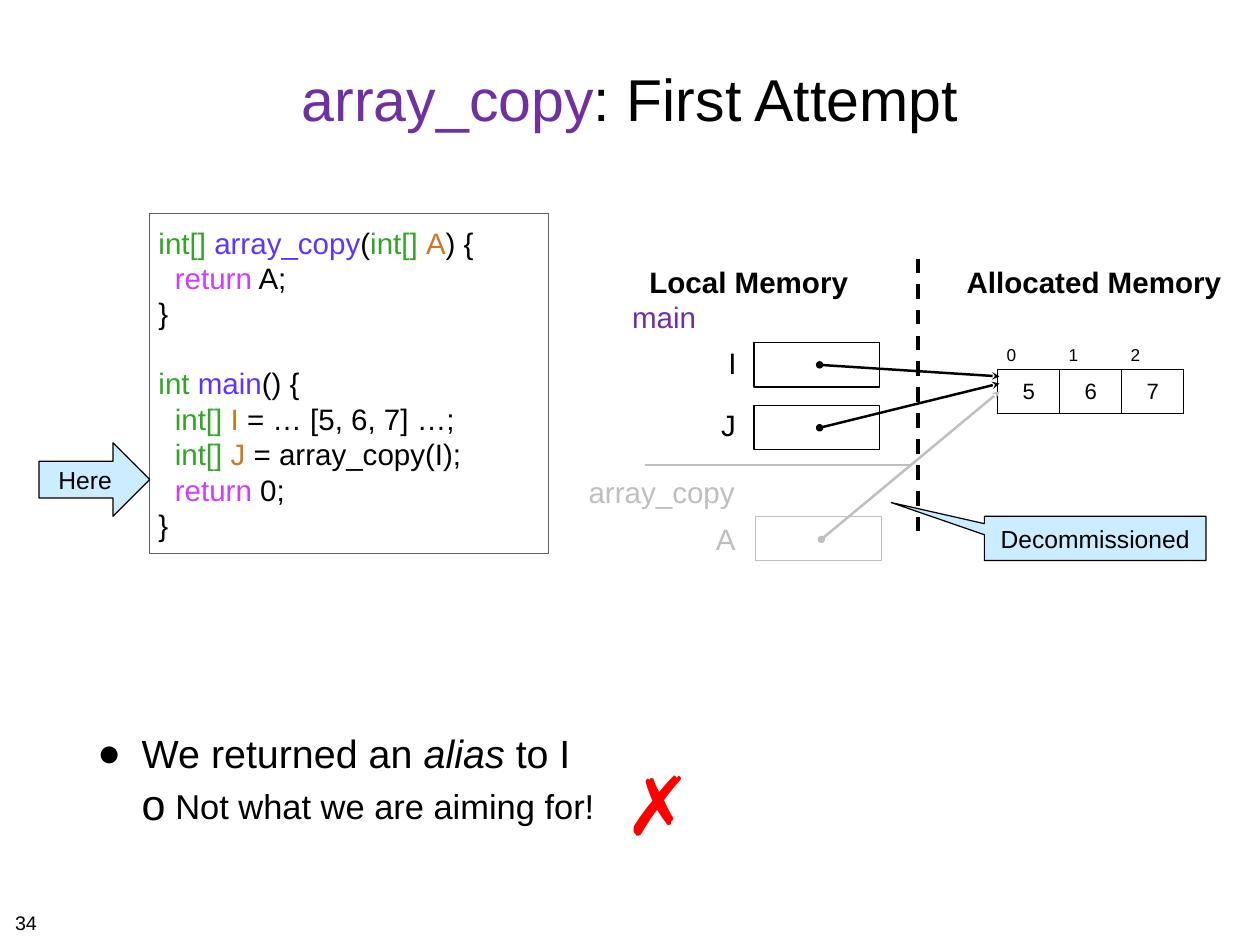
import pptx
import pptx.util
import pptx.dml.color
import pptx.enum.dml
import pptx.enum.shapes
import pptx.enum.text
import pptx.oxml
import pptx.oxml.ns

Inches, Pt = pptx.util.Inches, pptx.util.Pt
RGBColor = pptx.dml.color.RGBColor
Shapes = pptx.enum.shapes.MSO_SHAPE
Align = pptx.enum.text.PP_ALIGN
Anchor = pptx.enum.text.MSO_ANCHOR

BLACK = RGBColor(0, 0, 0)
GRAY = RGBColor(0xBF, 0xBF, 0xBF)
FRAME = RGBColor(0x5E, 0x5E, 0x5E)
PURPLE = RGBColor(0x70, 0x30, 0xA0)
TYPE = RGBColor(0x34, 0xA3, 0x27)
FUNCTION = RGBColor(0x5E, 0x34, 0xFF)
VARIABLE = RGBColor(0xCD, 0x79, 0x23)
KEYWORD = RGBColor(0xD0, 0x3B, 0xFF)
PALE_BLUE = RGBColor(0xCC, 0xEC, 0xFF)
RED = RGBColor(0xFF, 0, 0)

TITLE = [("array_copy", PURPLE), (": First Attempt", BLACK)]
CODE = [
    [("int[] ", TYPE), ("array_copy", FUNCTION), ("(", BLACK), ("int[] ", TYPE),
     ("A", VARIABLE), (") {", BLACK)],
    [("  return", KEYWORD), (" A;", BLACK)],
    [("}", BLACK)],
    [("int ", TYPE), ("main", FUNCTION), ("() {", BLACK)],
    [("  int[] ", TYPE), ("I", VARIABLE), (" = … [5, 6, 7] …;", BLACK)],
    [("  int[] ", TYPE), ("J", VARIABLE), (" = array_copy(I);", BLACK)],
    [("  return", KEYWORD), (" 0;", BLACK)],
    [("}", BLACK)],
]
MAIN_LINE = 3
# spans, size, left margin, hanging indent, space before, bullet, bullet percent
BULLETS = [
    ([("We returned an ", BLACK), ("alias", BLACK), (" to I", BLACK)], 32, 0.5, 0.5, 8, "●", 100),
    ([("Not what we are aiming for!", BLACK)], 28, 0.88, 0.38, 7, "o", 125),
]
# text, left, top, width, height, size, colour, bold, alignment, side and top inset
LABELS = [
    ("Allocated Memory", 10.84, 2.92, 3.01, 0.52, 24, BLACK, True, Align.CENTER, 0.06, 0.06),
    ("Local Memory", 7.26, 2.92, 2.38, 0.52, 24, BLACK, True, Align.CENTER, 0.06, 0.06),
    ("I", 8.16, 3.83, 0.2, 0.52, 24, BLACK, False, Align.CENTER, 0.06, 0.06),
    ("J", 8.08, 4.54, 0.28, 0.52, 24, BLACK, False, Align.CENTER, 0.06, 0.06),
    ("A", 8.02, 5.82, 0.34, 0.52, 24, GRAY, False, Align.RIGHT, 0.06, 0.06),
    ("main", 7.03, 3.33, 0.93, 0.51, 24, PURPLE, False, Align.CENTER, 0.1, 0.05),
    ("array_copy", 6.52, 5.3, 1.87, 0.51, 24, GRAY, False, Align.RIGHT, 0.1, 0.05),
    ("✗", 6.95, 8.47, 0.8, 1.21, 66, RED, True, Align.CENTER, 0.1, 0.05),
    ("34", 0.11, 10.23, 0.37, 0.35, 16, BLACK, False, Align.LEFT, 0.06, 0.06),
]
VARIABLE_BOXES = [(8.51, 3.87, BLACK), (8.51, 4.58, BLACK), (8.53, 5.83, GRAY)]
POINTERS = [
    ((9.27, 6.09), (11.28, 4.42), GRAY),
    ((9.25, 4.12), (11.28, 4.25), BLACK),
    ((9.25, 4.83), (11.28, 4.33), BLACK),
]
ARRAY = [["0", "1", "2"], ["5", "6", "7"]]
ARRAY_STYLE = [(14, Align.LEFT, Anchor.BOTTOM, ["lnB"]),
               (18, Align.CENTER, Anchor.MIDDLE, ["lnL", "lnR", "lnT", "lnB"])]
CELL_WIDTH, CELL_HEIGHT = 0.7, 0.5

deck = pptx.Presentation()
deck.slide_width, deck.slide_height = Inches(14.22), Inches(10.67)
page = deck.slides.add_slide(deck.slide_layouts[5])


def write(para, spans, size, align=Align.LEFT, bold=False):
    para.alignment = align
    for text, color in spans:
        run = para.add_run()
        run.text = text
        run.font.name, run.font.size, run.font.bold = "Arial", Pt(size), bold
        run.font.color.rgb = color


def set_frame(frame, side, top, anchor=Anchor.MIDDLE, wrap=True):
    frame.margin_left = frame.margin_right = Inches(side)
    frame.margin_top = frame.margin_bottom = Inches(top)
    frame.vertical_anchor, frame.word_wrap = anchor, wrap


def add_box(kind, left, top, width, height, line, fill=None):
    box = page.shapes.add_shape(kind, *map(Inches, (left, top, width, height)))
    box.shadow.inherit = False
    box.line.color.rgb, box.line.width = line, Pt(1)
    if fill is None:
        box.fill.background()
    else:
        box.fill.solid()
        box.fill.fore_color.rgb = fill
    return box


def add_line(start, end, color, width):
    line = page.shapes.add_connector(pptx.enum.shapes.MSO_CONNECTOR.STRAIGHT,
                                     *map(Inches, start + end))
    line.line.color.rgb, line.line.width = color, Pt(width)
    line._element.spPr.append(pptx.oxml.parse_xml(
        f"<a:effectLst {pptx.oxml.ns.nsdecls('a')}/>"))
    return line


def add_child(parent, tag, **attributes):
    child = parent.makeelement(pptx.oxml.ns.qn(tag), attributes)
    parent.append(child)
    return child


title = page.shapes.title
title.left, title.top, title.width, title.height = map(Inches, (1.04, 0.28, 12.14, 1.64))
set_frame(title.text_frame, 0.06, 0.06)
write(title.text_frame.paragraphs[0], TITLE, 48, Align.CENTER)

body = page.shapes.add_textbox(*map(Inches, (1.04, 8.17, 12.14, 1.5))).text_frame
set_frame(body, 0.06, 0.06, Anchor.TOP)
for number, (spans, size, margin, hanging, before, mark, percent) in enumerate(BULLETS):
    para = body.add_paragraph() if number else body.paragraphs[0]
    write(para, spans, size)
    para.level, para.space_before = number, Pt(before)
    settings = para._p.get_or_add_pPr()
    settings.set("marL", str(Inches(margin)))
    settings.set("indent", str(-Inches(hanging)))
    add_child(settings, "a:buSzPct", val=str(percent * 1000))
    add_child(settings, "a:buFont", typeface="Arial")
    add_child(settings, "a:buChar", char=mark)
body.paragraphs[0].runs[1].font.italic = True

code = add_box(Shapes.RECTANGLE, 1.69, 2.41, 4.5, 3.84, FRAME).text_frame
set_frame(code, 0.1, 0.1)
for number, spans in enumerate(CODE):
    para = code.add_paragraph() if number else code.paragraphs[0]
    write(para, spans, 24)
code.paragraphs[MAIN_LINE].space_before = Pt(28)

here = add_box(Shapes.RIGHT_ARROW, 0.44, 5, 1.25, 0.83, BLACK, PALE_BLUE)
set_frame(here.text_frame, 0.05, 0.05)
write(here.text_frame.paragraphs[0], [("Here", BLACK)], 20, Align.CENTER)

for text, left, top, width, height, size, color, bold, align, side, inset in LABELS:
    label = page.shapes.add_textbox(*map(Inches, (left, top, width, height))).text_frame
    set_frame(label, side, inset, Anchor.TOP, wrap=False)
    write(label.paragraphs[0], [(text, color)], size, align, bold)

for left, top, color in VARIABLE_BOXES:
    add_box(Shapes.RECTANGLE, left, top, 1.42, 0.5, color)

divider = add_line((10.36, 6), (10.36, 2.92), BLACK, 3)
divider.line.dash_style = pptx.enum.dml.MSO_LINE.DASH
add_line((7.28, 5.25), (10.28, 5.25), GRAY, 2)

array = page.shapes.add_table(2, 3, *map(Inches, (11.26, 3.67, 3 * CELL_WIDTH, 2 * CELL_HEIGHT))).table
array.first_row = array.horz_banding = False
for column in array.columns:
    column.width = Inches(CELL_WIDTH)
for row, values, (size, align, anchor, borders) in zip(array.rows, ARRAY, ARRAY_STYLE):
    row.height = Inches(CELL_HEIGHT)
    for cell, value in zip(row.cells, values):
        cell.vertical_anchor = anchor
        write(cell.text_frame.paragraphs[0], [(value, BLACK)], size, align)
        for side in borders:
            border = add_child(cell._tc.get_or_add_tcPr(), "a:" + side, w=str(Pt(1)))
            add_child(add_child(border, "a:solidFill"), "a:srgbClr", val=str(BLACK))
        cell.fill.background()

for start, end, color in POINTERS:
    outline = add_line(start, end, color, 2).line._get_or_add_ln()
    add_child(outline, "a:headEnd", type="oval")
    add_child(outline, "a:tailEnd", type="stealth")

callout = add_box(Shapes.RECTANGULAR_CALLOUT, 11.11, 5.83, 2.5, 0.5, BLACK, PALE_BLUE)
callout.adjustments[0], callout.adjustments[1] = -0.92, -0.81
set_frame(callout.text_frame, 0.05, 0.05)
write(callout.text_frame.paragraphs[0], [("Decommissioned", BLACK)], 20, Align.CENTER)

deck.save("out.pptx")
